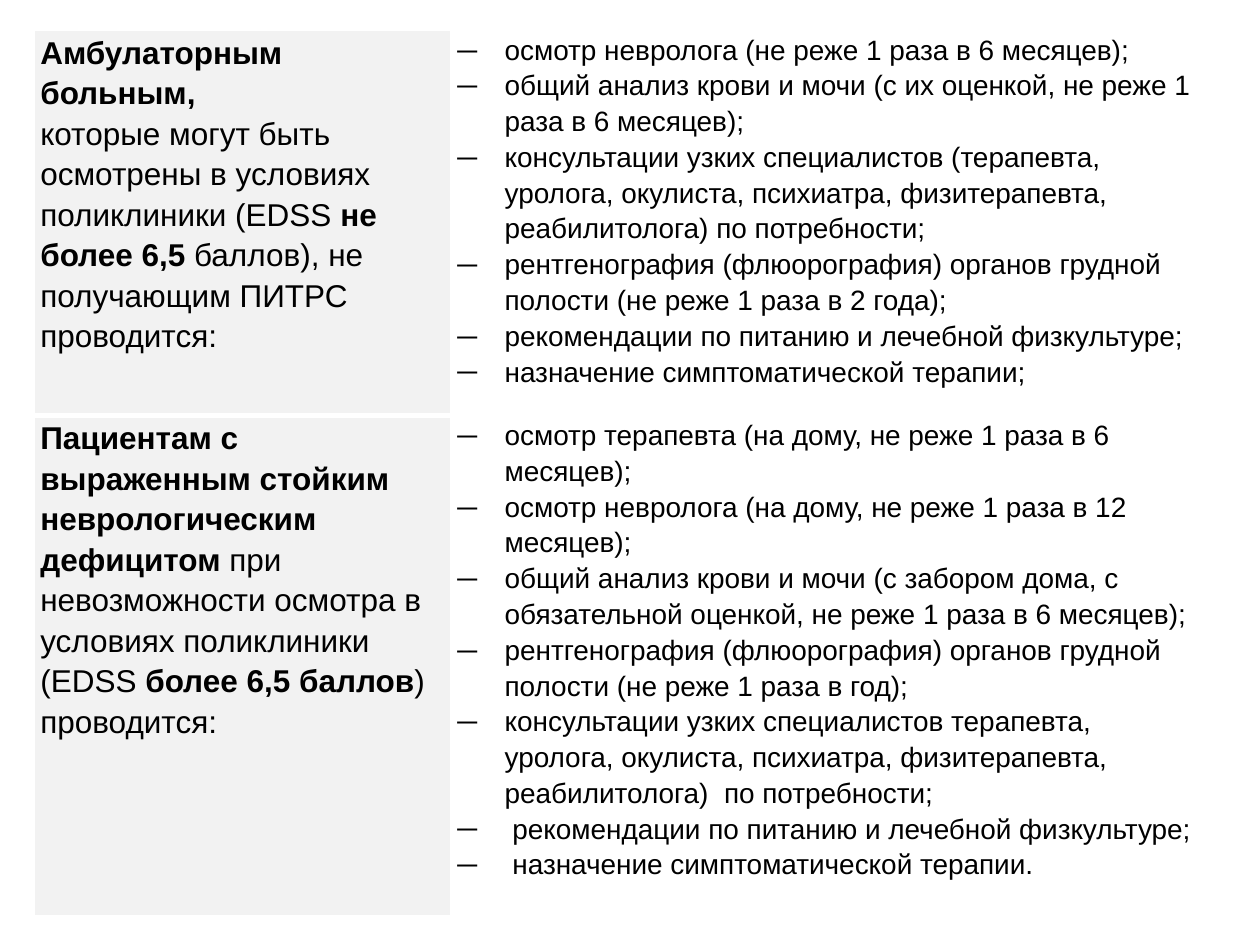
from dataclasses import dataclass

from lxml import etree
from pptx import Presentation
from pptx.dml.color import RGBColor
from pptx.oxml.ns import qn
from pptx.util import Inches, Pt


@dataclass(frozen=True)
class Theme:
    font: str = "Arial"
    ink: str = "000000"
    panel: str = "F2F2F2"
    border: str = "FFFFFF"
    lead_size: int = 18
    item_size: int = 16
    spacing: float = 1.15
    after: int = 10
    thin: int = 1
    thick: int = 3
    bullet: str = "─"
    indent: float = 3.75


GRID_COLS, GRID_ROWS = 100, 75
WIDTH, HEIGHT = Inches(10), Inches(7.5)
BLANK = 6

LEADS = [
    [
        ("Амбулаторным больным, \n", True),
        ("которые могут быть осмотрены в условиях поликлиники (EDSS ", False),
        ("не более 6,5 ", True),
        ("баллов), не получающим ПИТРС проводится:", False),
    ],
    [
        ("Пациентам с выраженным стойким неврологическим дефицитом ", True),
        ("при невозможности осмотра в условиях поликлиники (EDSS ", False),
        ("более 6,5 баллов", True),
        (") проводится:", False),
    ],
]
ITEMS = [
    [
        "осмотр невролога (не реже 1 раза в 6 месяцев);",
        "общий анализ крови и мочи (с их оценкой, не реже 1 раза в 6 месяцев);",
        "консультации узких специалистов (терапевта, уролога, окулиста, "
        "психиатра, физитерапевта, реабилитолога) по потребности;",
        "рентгенография (флюорография) органов грудной полости "
        "(не реже 1 раза в 2 года);",
        "рекомендации по питанию и лечебной физкультуре;",
        "назначение симптоматической терапии;",
    ],
    [
        "осмотр терапевта (на дому, не реже 1 раза в 6 месяцев);",
        "осмотр невролога (на дому, не реже 1 раза в 12 месяцев);",
        "общий анализ крови и мочи (с забором дома, с обязательной оценкой, "
        "не реже 1 раза в 6 месяцев);",
        "рентгенография (флюорография) органов грудной полости "
        "(не реже 1 раза в год);",
        "консультации узких специалистов терапевта, уролога, окулиста, "
        "психиатра, физитерапевта, реабилитолога)  по потребности;",
        " рекомендации по питанию и лечебной физкультуре;",
        " назначение симптоматической терапии.",
    ],
]


class Deck:
    def __init__(self, theme):
        self.theme = theme
        self.prs = Presentation()
        self.prs.slide_width, self.prs.slide_height = WIDTH, HEIGHT
        self.s = self.prs.slides.add_slide(self.prs.slide_layouts[BLANK])

    def x(self, cols):
        return round(WIDTH * cols / GRID_COLS)

    def y(self, rows):
        return round(HEIGHT * rows / GRID_ROWS)

    def table(self, left, top, widths, heights):
        frame = self.s.shapes.add_table(
            len(heights), len(widths), self.x(left), self.y(top),
            self.x(sum(widths)), self.y(sum(heights)))
        tbl = frame.table
        tbl.first_row = tbl.horz_banding = False
        for col, w in zip(tbl.columns, widths):
            col.width = self.x(w)
        for row, h in zip(tbl.rows, heights):
            row.height = self.y(h)
        return tbl

    def cell(self, cell, fill=None, bottom=None):
        t = self.theme
        margins = {"margin_left": Inches(0.05), "margin_right": Inches(0.05),
                   "margin_top": 0, "margin_bottom": 0}
        for name, value in margins.items():
            setattr(cell, name, value)
        tcPr = cell._tc.get_or_add_tcPr()
        for side in "LRTB":
            width = bottom if side == "B" and bottom else t.thin
            ln = etree.SubElement(tcPr, qn(f"a:ln{side}"), w=str(Pt(width)))
            solid = etree.SubElement(ln, qn("a:solidFill"))
            etree.SubElement(solid, qn("a:srgbClr"), val=t.border)
        if fill:
            cell.fill.solid()
            cell.fill.fore_color.rgb = RGBColor.from_string(fill)
        else:
            cell.fill.background()
        return cell.text_frame

    def run(self, p, text, size, bold=False):
        r = p.add_run()
        r.text = text.rstrip("\n")
        style = {"name": self.theme.font, "size": Pt(size), "bold": bold}
        for name, value in style.items():
            setattr(r.font, name, value)
        r.font.color.rgb = RGBColor.from_string(self.theme.ink)
        if text.endswith("\n"):
            p.add_line_break()

    def space(self, p, after=0):
        p.line_spacing = self.theme.spacing
        p.space_after = Pt(after)

    def lead(self, tf, parts):
        p = tf.paragraphs[0]
        self.space(p, self.theme.after)
        for text, bold in parts:
            self.run(p, text, self.theme.lead_size, bold)

    def bullets(self, tf, items, after=0):
        t = self.theme
        for i, text in enumerate(items):
            p = tf.add_paragraph() if i else tf.paragraphs[0]
            pPr = p._p.get_or_add_pPr()
            pPr.set("marL", str(self.x(t.indent)))
            pPr.set("indent", str(-self.x(t.indent)))
            etree.SubElement(pPr, qn("a:buFont"), typeface=t.font)
            etree.SubElement(pPr, qn("a:buChar"), char=t.bullet)
            self.space(p, after if i == len(items) - 1 else 0)
            self.run(p, text, t.item_size)


def main():
    theme = Theme()
    deck = Deck(theme)
    tbl = deck.table(2.7, 2.4, [33.1, 60.4], [30.6, 39.7])
    bottoms = [theme.thick, theme.thin]
    afters = [theme.after, 0]
    for i, (lead, items) in enumerate(zip(LEADS, ITEMS)):
        deck.lead(deck.cell(tbl.cell(i, 0), theme.panel, bottoms[i]), lead)
        deck.bullets(deck.cell(tbl.cell(i, 1), bottom=bottoms[i]), items, afters[i])
    deck.prs.save("out.pptx")


if __name__ == "__main__":
    main()
